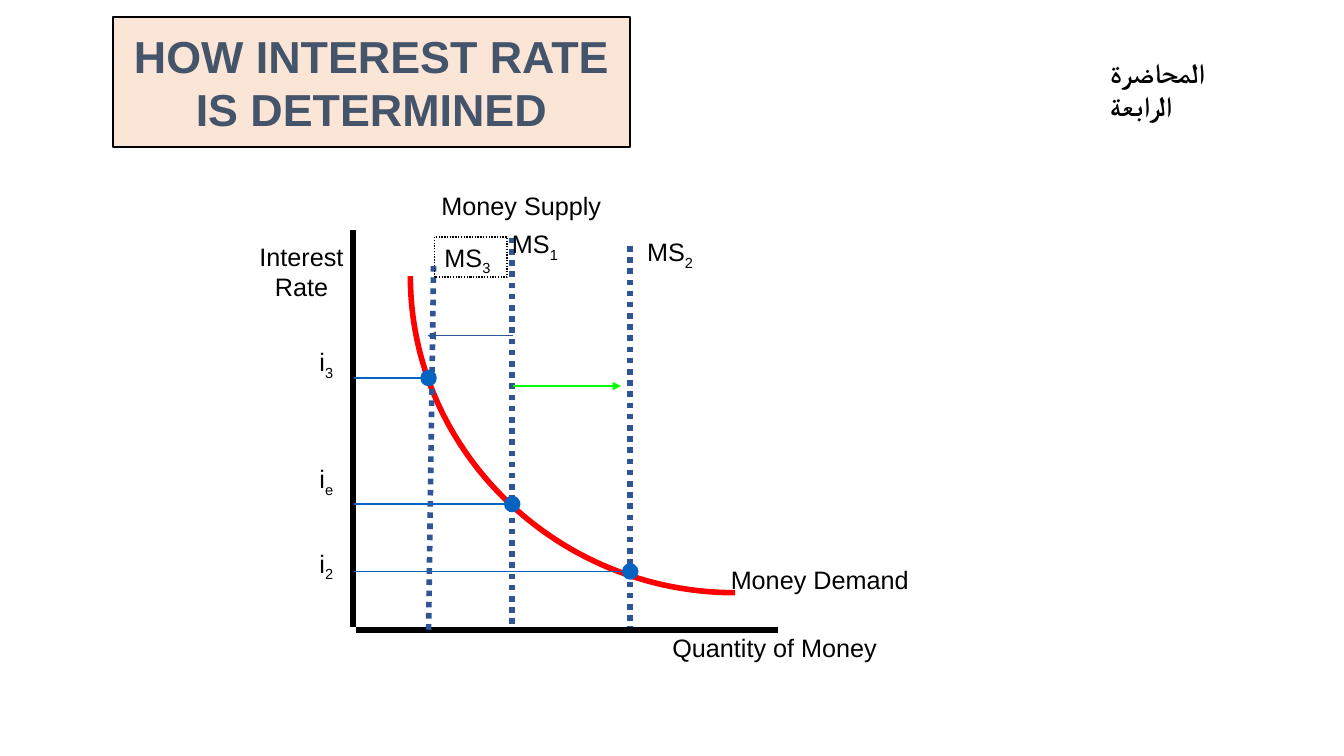
from lxml import etree
from pptx import Presentation
from pptx.dml.color import RGBColor
from pptx.enum.dml import MSO_LINE_DASH_STYLE as DASH
from pptx.enum.shapes import MSO_CONNECTOR, MSO_SHAPE
from pptx.enum.text import MSO_ANCHOR, MSO_AUTO_SIZE as FIT, PP_ALIGN
from pptx.oxml.ns import qn
from pptx.util import Inches, Pt

BLACK = RGBColor(0x00, 0x00, 0x00)
PEACH = RGBColor(0xFB, 0xE5, 0xD6)
SLATE = RGBColor(0x44, 0x54, 0x6A)
RED = RGBColor(0xFF, 0x00, 0x00)
GREEN = RGBColor(0x00, 0xFF, 0x00)
NAVY = RGBColor(0x2F, 0x55, 0x97)
BLUE = RGBColor(0x05, 0x63, 0xC1)


class Diagram:
    """Draws the parts of an economics diagram on one slide in one style."""

    def __init__(self, slide, font="Arial", size=18):
        self.slide, self.shapes = slide, slide.shapes
        self.font, self.size = font, size

    def style(self, run, color=BLACK, size=None, bold=False, font=None):
        """Format one run of text."""
        f = run.font
        f.name, f.size, f.bold = font or self.font, Pt(size or self.size), bold
        f.color.rgb = color

    def title(self, text, x, y, w, h):
        """Place and format the title in its filled frame."""
        sp = self.shapes.title
        sp.left, sp.top, sp.width, sp.height = map(Inches, (x, y, w, h))
        sp.fill.solid()
        sp.fill.fore_color.rgb = PEACH
        sp.line.color.rgb, sp.line.width = BLACK, Pt(1)
        tf = sp.text_frame
        tf.text, tf.word_wrap, tf.auto_size = text, True, FIT.NONE
        tf.vertical_anchor = MSO_ANCHOR.MIDDLE
        p = tf.paragraphs[0]
        p.alignment = PP_ALIGN.CENTER
        self.style(p.runs[0], SLATE, 32, True)

    def label(self, text, x, y, w, h, sub="", wrap=False, align=None, **fmt):
        """Add a text label, with an optional subscript."""
        sp = self.shapes.add_textbox(*map(Inches, (x, y, w, h)))
        tf = sp.text_frame
        tf.text, tf.word_wrap, tf.auto_size = text, wrap, FIT.SHAPE_TO_FIT_TEXT
        if sub:
            r = tf.paragraphs[0].add_run()
            r.text = sub
            r.font._element.set("baseline", "-25000")
        for p in tf.paragraphs:
            p.alignment = align
            for r in p.runs:
                self.style(r, **fmt)
        return sp

    def line(self, x1, y1, x2, y2, color, width=1, dash=None, arrow=False):
        """Add a straight line, dashed or with an arrowhead if asked."""
        c = self.shapes.add_connector(
            MSO_CONNECTOR.STRAIGHT, *map(Inches, (x1, y1, x2, y2)))
        c.line.color.rgb, c.line.width = color, Pt(width)
        if dash:
            c.line.dash_style = dash
        if arrow:
            etree.SubElement(c.line._get_or_add_ln(), qn("a:tailEnd"), type="triangle")
        etree.SubElement(c._element.spPr, qn("a:effectLst"))

    def dot(self, x, y, d=0.15):
        """Mark an equilibrium point centred on x, y."""
        sp = self.shapes.add_shape(
            MSO_SHAPE.OVAL, *map(Inches, (x - d / 2, y - d / 2, d, d)))
        sp.shadow.inherit = False
        sp.fill.solid()
        sp.fill.fore_color.rgb = sp.line.color.rgb = BLUE
        sp.line.width = Pt(1)

    def curve(self, x1, y1, x2, y2, color, width):
        """Add a quarter ellipse that falls steeply and then flattens."""
        start, end = (Inches(x1), Inches(y1)), (Inches(x2), Inches(y2))
        fb = self.shapes.build_freeform(*start)
        fb.add_line_segments([end], close=False)
        sp = fb.convert_to_shape()
        w, h = end[0] - start[0], end[1] - start[1]
        segment = next(sp._element.iter(qn("a:lnTo")))
        segment.tag = qn("a:cubicBezTo")
        for i, (px, py) in enumerate([(0, 0.55 * h), (0.45 * w, h)]):
            pt = etree.Element(qn("a:pt"), x=str(round(px)), y=str(round(py)))
            segment.insert(i, pt)
        sp.shadow.inherit = False
        sp.fill.background()
        sp.line.color.rgb, sp.line.width = color, Pt(width)


def main():
    """Build the slide and save it."""
    prs = Presentation()
    prs.slide_width, prs.slide_height = Inches(13.33), Inches(7.5)
    d = Diagram(prs.slides.add_slide(prs.slide_layouts[5]))

    d.title("HOW INTEREST RATE IS DETERMINED", 1.12, 0.17, 5.13, 1.29)
    d.label("المحاضرة الرابعة", 10.91, 0.5, 1.72, 0.44, wrap=True,
            size=20, bold=True, font="Calibri")

    d.line(3.5, 2.28, 3.5, 6.22, BLACK, 4)
    d.line(3.53, 6.25, 7.72, 6.25, BLACK, 4)
    d.curve(4.07, 2.74, 7.29, 5.88, RED, 4)

    d.label("Interest\nRate", 2.47, 2.34, 1.04, 0.7, align=PP_ALIGN.CENTER)
    d.label("Quantity of Money", 6.57, 6.22, 3.8, 0.63)
    d.label("Money Demand", 7.15, 5.55, 3.33, 0.63)
    d.label("Money Supply", 4.28, 1.84, 3.01, 0.63)

    for top, x1, x2, bottom in [(2.36, 5.08, 5.08, 6.22),
                                (2.44, 6.25, 6.25, 6.22),
                                (2.64, 4.3, 4.25, 6.3)]:
        d.line(x1, top, x2, bottom, NAVY, 4, DASH.ROUND_DOT)
    d.label("MS", 4.98, 2.22, 1.03, 0.63, sub="1")
    d.label("MS", 6.32, 2.3, 1.03, 0.63, sub="2")
    ms3 = d.label("MS", 4.31, 2.35, 0.72, 0.4, sub="3", wrap=True)
    ms3.line.color.rgb, ms3.line.width = BLACK, Pt(1)
    ms3.line.dash_style = DASH.ROUND_DOT

    d.line(5.09, 3.83, 6.16, 3.83, GREEN, arrow=True)
    d.line(5.09, 3.33, 4.24, 3.33, NAVY, arrow=True)

    for sub, x, y, label_top in [("e", 5.08, 5, 4.55),
                                 ("2", 6.25, 5.67, 5.39),
                                 ("3", 4.25, 3.75, 3.39)]:
        d.line(3.51, y, x, y, BLUE)
        d.dot(x, y)
        d.label("i", 3.07, label_top, 0.46, 0.63, sub=sub)

    prs.save("out.pptx")


if __name__ == "__main__":
    main()
